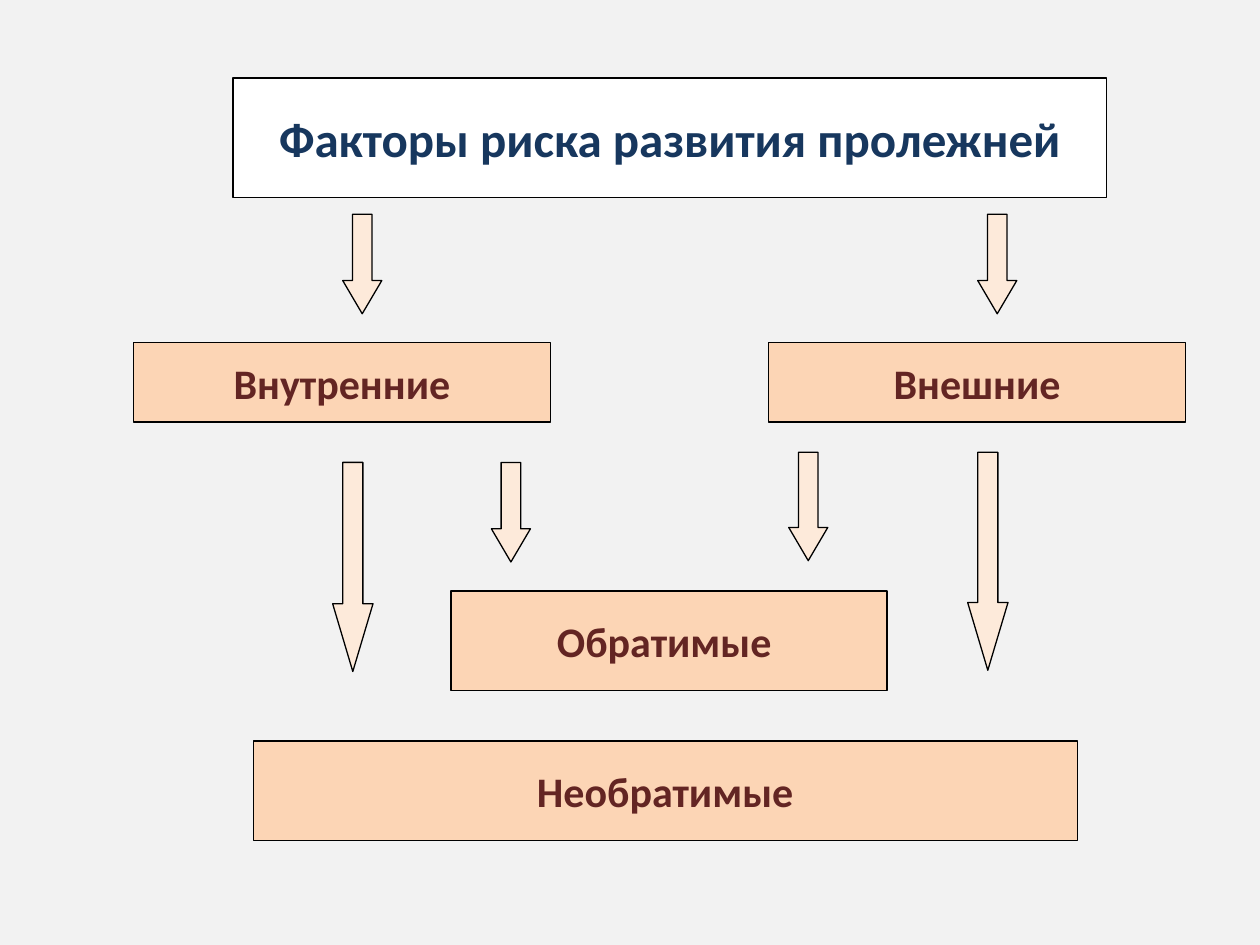
"""Builds a slide with a tree of pressure sore risk factors."""
from pptx import Presentation, util as u
from pptx.dml.color import RGBColor
from pptx.enum import shapes, text

WIDE, HIGH = 10, 7.5
FONT = "Calibri"
BACK, LINE, SAND, PALE = "F2F2F2", "000000", "FCD5B5", "FDEADA"
NAVY, WINE = "17375E", "632523"
SHIFT = 5.04
LEFT = 1.06
SIDE = (2.72, 3.31, 0.63)

BOXES = [
    ("Факторы риска развития пролежней", (1.85, 0.62, 6.93, 0.95), "FFFFFF", NAVY, 28),
    ("Внутренние", (LEFT, *SIDE), SAND, WINE, 24),
    ("Внешние", (LEFT + SHIFT, *SIDE), SAND, WINE, 24),
    ("Необратимые", (2.01, 5.88, 6.54, 0.79), SAND, WINE, 24),
    ("Обратимые ", (3.58, 4.69, 3.46, 0.79), SAND, WINE, 24),
]
THIN, LONG = (0.31, 0.85), (0.32, 1.68)
ARROWS = [
    (2.72, 1.7, 0.79, THIN),
    (2.72 + SHIFT, 1.7, 0.79, THIN),
    (3.9, 3.67, 0.79, THIN),
    (6.26, 3.59, 0.86, THIN),
    (2.64 + SHIFT, 3.59, 1.73, LONG),
    (2.64, 3.67, 1.66, LONG),
]


def color(code):
    return RGBColor.from_string(code)


def draw(slide, kind, place, fill):
    shape = slide.shapes.add_shape(kind, *map(u.Inches, place))
    shape.shadow.inherit = False
    shape.fill.solid()
    shape.fill.fore_color.rgb = color(fill)
    shape.line.color.rgb = color(LINE)
    shape.line.width = u.Pt(0.75)
    return shape


def label(shape, words, ink, size):
    frame = shape.text_frame
    frame.text = words
    frame.word_wrap = False
    frame.vertical_anchor = text.MSO_ANCHOR.MIDDLE
    para = frame.paragraphs[0]
    para.alignment = text.PP_ALIGN.CENTER
    font = para.runs[0].font
    font.name, font.size, font.bold = FONT, u.Pt(size), True
    font.color.rgb = color(ink)


def main():
    deck = Presentation()
    deck.slide_width, deck.slide_height = u.Inches(WIDE), u.Inches(HIGH)
    slide = deck.slides.add_slide(deck.slide_layouts[6])
    slide.background.fill.solid()
    slide.background.fill.fore_color.rgb = color(BACK)
    for words, place, fill, ink, size in BOXES:
        box = draw(slide, shapes.MSO_SHAPE.RECTANGLE, place, fill)
        label(box, words, ink, size)
    for left, top, high, (wide, head) in ARROWS:
        arrow = draw(slide, shapes.MSO_SHAPE.DOWN_ARROW, (left, top, wide, high), PALE)
        arrow.adjustments[0] = 0.5
        arrow.adjustments[1] = head
    deck.save("out.pptx")


if __name__ == "__main__":
    main()
